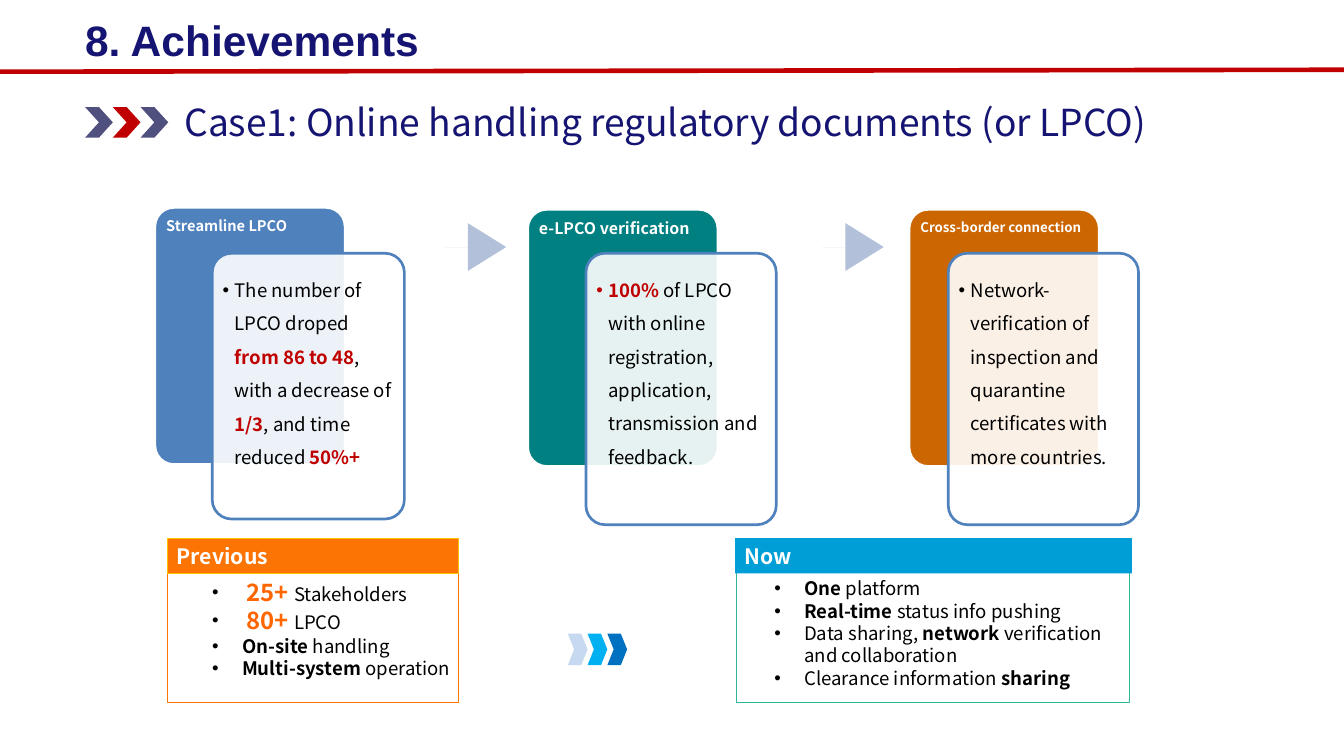
from lxml import etree
from pptx import Presentation, util as u
from pptx.dml.color import RGBColor
from pptx.enum import shapes, text
from pptx.oxml.ns import qn

COLORS = {
    "navy": "151472", "red": "C00000", "white": "FFFFFF", "black": "000000",
    "blue": "4F81BD", "teal": "008080", "brown": "CC6600", "arrow": "B2C0DA",
    "slate": "50507F", "pale": "C6D9F1", "sky": "00B0F0", "deep": "0070C0",
    "orange": "FC7404", "number": "FF6600", "gold": "FFC000",
    "cyan": "009ED6", "green": "2BB79C",
}
CELL = u.Inches(0.1)  # one column wide, one row high
COLUMNS, ROWS = 140.6, 79.1
FONT = "Noto Sans CJK SC"
BOLD = {"bold": True}
RED = {"color": "red", "bold": True}
NUMBER = {"size": 18, "color": "number", "bold": True}


def grid(*cells):
    return [round(cell * CELL) for cell in cells]


def color_of(name):
    return RGBColor.from_string(COLORS[name])


def write_text(frame, paragraphs, size=14, color="black", bold=False, font=FONT,
               indent=None, spacing=1.0, anchor="TOP", margins=(1, 0.5, 1, 0.5)):
    """Each paragraph is a list of strings or (string, format changes) pairs."""
    frame.word_wrap = True
    frame.auto_size = text.MSO_AUTO_SIZE.NONE
    frame.vertical_anchor = text.MSO_ANCHOR[anchor]
    (frame.margin_left, frame.margin_top,
     frame.margin_right, frame.margin_bottom) = grid(*margins)
    for number, runs in enumerate(paragraphs):
        paragraph = frame.add_paragraph() if number else frame.paragraphs[0]
        if indent:
            properties = paragraph._p.get_or_add_pPr()
            properties.set("marL", str(grid(indent)[0]))
            properties.set("indent", str(grid(-indent)[0]))
            etree.SubElement(properties, qn("a:buFont"), typeface="Arial")
            etree.SubElement(properties, qn("a:buChar"), char="•")
        paragraph.alignment = text.PP_ALIGN.LEFT
        paragraph.line_spacing = spacing
        paragraph.space_before = u.Pt(0)
        for item in runs:
            words, changes = (item, {}) if isinstance(item, str) else item
            style = {"size": size, "color": color, "bold": bold, **changes}
            run = paragraph.add_run()
            run.text = words
            run.font.name = font
            run.font.size = u.Pt(style["size"])
            run.font.bold = style["bold"]
            run.font.color.rgb = color_of(style["color"])


class Deck:
    def __init__(self):
        self.presentation = Presentation()
        self.presentation.slide_width, self.presentation.slide_height = grid(COLUMNS, ROWS)
        comparison = self.presentation.slide_layouts[4]
        self.slide = self.presentation.slides.add_slide(comparison)

    def paint(self, shape, fill=None, line=None, weight=0.75):
        if fill:
            shape.fill.solid()
            shape.fill.fore_color.rgb = color_of(fill)
        else:
            shape.fill.background()
        if line:
            shape.line.color.rgb = color_of(line)
            shape.line.width = u.Pt(weight)
        else:
            shape.line.fill.background()

    def placeholder(self, index, box, paragraphs, fill=None, line=None, **style):
        shape = self.slide.placeholders[index]
        shape.left, shape.top, shape.width, shape.height = grid(*box)
        self.paint(shape, fill, line)
        write_text(shape.text_frame, paragraphs, **style)
        shape.element.getparent().append(shape.element)  # bring to front

    def textbox(self, box, paragraphs, **style):
        shape = self.slide.shapes.add_textbox(*grid(*box))
        write_text(shape.text_frame, paragraphs, **style)

    def shape(self, kind, box, adjust=(), alpha=None, **paint):
        shape = self.slide.shapes.add_shape(shapes.MSO_SHAPE[kind], *grid(*box))
        shape.shadow.inherit = False
        for number, value in enumerate(adjust):
            shape.adjustments[number] = value
        self.paint(shape, **paint)
        if alpha:
            fill_color = shape.element.spPr.find(qn("a:solidFill"))[0]
            etree.SubElement(fill_color, qn("a:alpha"), val=str(alpha * 1000))
        return shape

    def line(self, start, end, color, weight):
        connector = self.slide.shapes.add_connector(
            shapes.MSO_CONNECTOR.STRAIGHT, *grid(*start, *end))
        connector.line.color.rgb = color_of(color)
        connector.line.width = u.Pt(weight)
        etree.SubElement(connector.element.spPr, qn("a:effectLst"))

    def chevrons(self, left, top, step, height, colors, adjust):
        for number, color in enumerate(colors):
            self.shape("CHEVRON", (left + number * step, top, step, height),
                       [adjust], fill=color)

    def card(self, back, front, color, heading, heading_size, body):
        """A coloured heading card with a translucent body card over it."""
        shape = self.shape("ROUNDED_RECTANGLE", back, [0.1],
                           fill=color, line="white", weight=2)
        write_text(shape.text_frame, [[heading]], size=heading_size, color="white",
                   bold=True, spacing=0.9, margins=(0.6, 0.6, 0.6, 0.2))
        shape = self.shape("ROUNDED_RECTANGLE", front, [0.1], alpha=90,
                           fill="white", line="blue", weight=2)
        write_text(shape.text_frame, [body], indent=1.25, spacing=1.5,
                   margins=(0.5, 0.9, 0.5, 0.5))

    def panel(self, first_index, frame, frame_color, heading_box, heading,
              fill, line, list_box, items):
        self.shape("RECTANGLE", frame, line=frame_color)
        self.placeholder(first_index, heading_box, [[heading]], fill=fill, line=line,
                         size=16, color="white", bold=True, anchor="MIDDLE")
        self.placeholder(first_index + 1, list_box, items, indent=3.13)


def main():
    deck = Deck()

    # Title and subtitle
    deck.placeholder(0, (7.9, 1.3, 45.9, 5.6), [["8. Achievements"]], size=32,
                     color="navy", bold=True, font="Arial", anchor="MIDDLE")
    deck.line((0, 7.5), (COLUMNS, 7.3), "red", 3.5)
    deck.chevrons(8.9, 11.2, 2.9, 3.2, ("slate", "red", "slate"), 0.5)
    deck.textbox((18.3, 9.9, 110.8, 5.7),
                 [["Case1: Online handling regulatory documents (or LPCO)"]],
                 size=28, color="navy")

    # Three steps, with arrows between them
    deck.card((16.2, 21.7, 19.9, 26.9), (22.2, 26.5, 20.1, 27.8), "blue",
              "Streamline LPCO", 11,
              ["The number of LPCO droped ", ("from 86 to 48", RED),
               ", with a decrease of ", ("1/3", RED),
               ", and time reduced ", ("50%+", RED)])
    deck.card((55.2, 21.9, 19.9, 26.9), (61.3, 26.5, 19.9, 28.4), "teal",
              "e-LPCO verification", 12,
              [("100% ", RED), "of LPCO with online registration, application, "
               "transmission and feedback."])
    deck.card((95.1, 21.9, 19.9, 26.9), (99.2, 26.5, 19.9, 28.4), "brown",
              "Cross-border connection", 10,
              ["Network-verification of inspection and quarantine "
               "certificates with more countries."])
    for left in (46.5, 86):
        deck.shape("RIGHT_ARROW", (left, 23.35, 6.45, 5), [0, 0.8], fill="arrow")

    # Previous and now
    deck.panel(1, (17.5, 59, 30.5, 14.5), "orange", (17.5, 56.3, 30.5, 3.7),
               "Previous", "orange", "gold", (21.2, 59.9, 28, 11.8),
               [[" ", ("25+ ", NUMBER), "Stakeholders"],
                [" ", ("80+ ", NUMBER), "LPCO"],
                [("On-site ", BOLD), "handling"],
                [("Multi-system", BOLD), " operation"]])
    deck.chevrons(59.4, 66.3, 2.07, 3.3, ("pale", "sky", "deep"), 0.32)
    deck.panel(3, (77, 59, 41.2, 14.5), "green", (76.9, 56.3, 41.5, 3.7),
               "Now", "cyan", None, (80, 59.9, 37.5, 12.8),
               [[("One ", BOLD), "platform"],
                [("Real-time ", BOLD), "status info pushing"],
                ["Data sharing, ", ("network", BOLD), " verification and collaboration"],
                ["Clearance information ", ("sharing", BOLD)]])

    deck.presentation.save("out.pptx")


if __name__ == "__main__":
    main()
